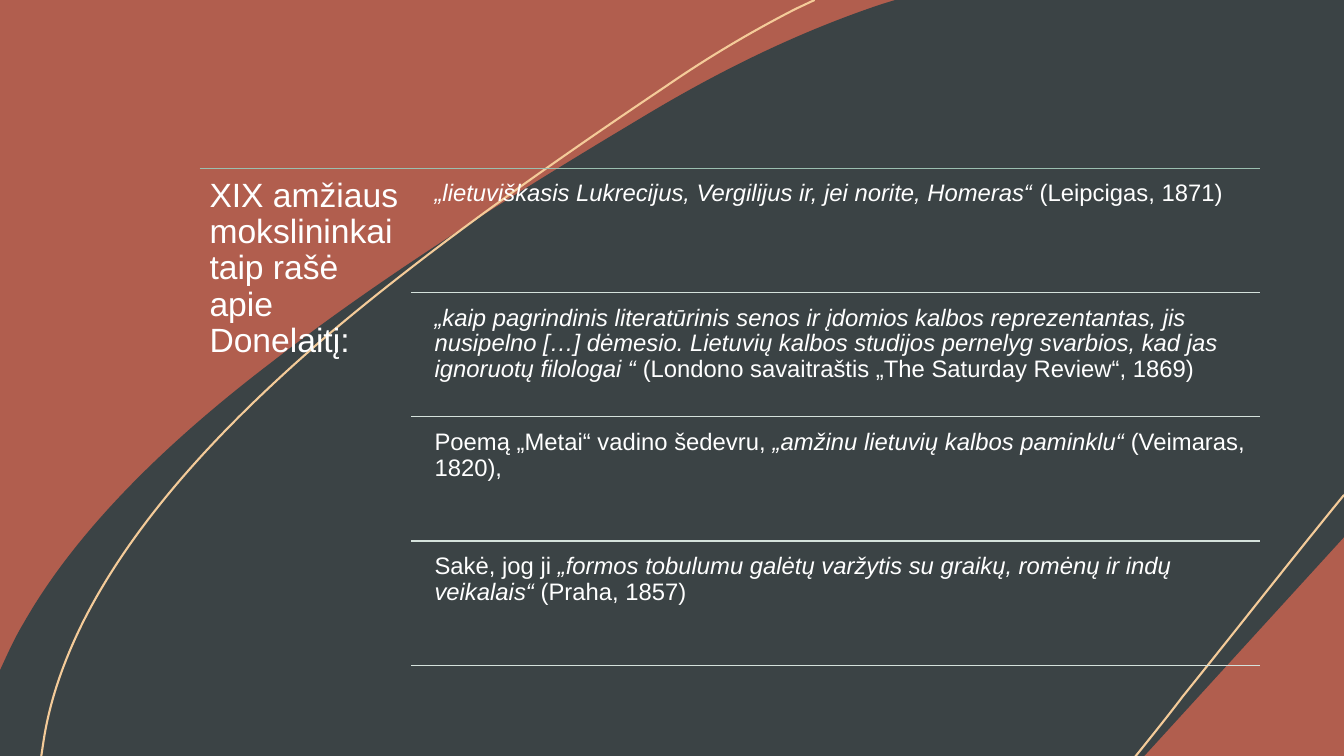
from lxml import etree
from pptx import Presentation
from pptx.dml.color import RGBColor
from pptx.enum.shapes import MSO_CONNECTOR
from pptx.enum.text import MSO_ANCHOR, PP_ALIGN
from pptx.oxml.ns import qn
from pptx.util import Inches, Pt

STRAIGHT = MSO_CONNECTOR.STRAIGHT
TOP, LEFT_ALIGN = MSO_ANCHOR.TOP, PP_ALIGN.LEFT

# Content: each quote is a list of (text, italic) runs
HEADING = [("XIX amžiaus mokslininkai taip rašė apie Donelaitį:", False)]
QUOTES = [
    [("„lietuviškasis Lukrecijus, Vergilijus ir, jei norite, Homeras“ ", True),
     ("(Leipcigas, 1871)", False)],
    [("„kaip pagrindinis literatūrinis senos ir įdomios kalbos reprezentantas, "
      "jis nusipelno […] dėmesio. Lietuvių kalbos studijos pernelyg svarbios, "
      "kad jas ignoruotų filologai “ ", True),
     ("(Londono savaitraštis „The Saturday Review“, 1869)", False)],
    [("Poemą „Metai“ vadino šedevru, ", False),
     ("„amžinu lietuvių kalbos paminklu“", True),
     (" (Veimaras, 1820),", False)],
    [("Sakė, jog ji ", False),
     ("„formos tobulumu galėtų varžytis su graikų, romėnų ir indų veikalais“ ", True),
     ("(Praha, 1857)", False)],
]

COLORS = {"terracotta": "B15E4E", "slate": "3B4345", "sand": "F4CB99",
          "top_rule": "9BBFB0", "rule": "D5E2DC", "text": "FFFFFF"}

# Geometry in inches
WIDTH, HEIGHT = 13.33, 7.5
LEFT, QUOTE_LEFT, RIGHT = 1.98, 4.08, 12.5
TABLE_TOP, TABLE_BOTTOM = 1.67, 6.6
ROW = (TABLE_BOTTOM - TABLE_TOP) / len(QUOTES)
QUOTE_INDENT, QUOTE_DROP, QUOTE_HEIGHT = 0.16, 0.06, 1.18

# Outlines: a start point, then steps of one point (line) or three (Bezier curve)
SLATE_BAND = [
    (8.88, 0), [(WIDTH, 0)], [(WIDTH, 5.33)], [(11.35, HEIGHT)], [(0, HEIGHT)],
    [(0, 6.66)], [(0, 6.65)],
    [(0.07, 6.5), (0.14, 6.34), (0.23, 6.19)],
    [(0.74, 5.29), (1.61, 4.42), (2.7, 3.59)],
    [(3.78, 2.75), (5.07, 1.94), (6.41, 1.14)],
    [(7.26, 0.63), (8.03, 0.28), (8.75, 0.04)],
]
LONG_ARC = [
    (0.41, HEIGHT), [(0.43, 7.37)],
    [(0.49, 6.96), (0.63, 6.56), (0.83, 6.16)],
    [(1.31, 5.21), (2.13, 4.3), (3.14, 3.42)],
    [(4.15, 2.55), (5.35, 1.7), (6.6, 0.86)],
    [(7.05, 0.55), (7.48, 0.3), (7.89, 0.09)], [(8.08, 0)],
]
CORNER_ARC = [
    (WIDTH, 4.91),
    [(12.8, 5.56), (12.27, 6.24), (11.73, 6.91)],
    [(11.58, 7.11), (11.24, 7.53), (11.24, 7.53)],
]


def color(name):
    return RGBColor.from_string(COLORS[name])


def to_emu(point):
    return tuple(Inches(value) for value in point)


def bend(shape, steps):
    """Replace the straight segments of curved steps with Bezier curves."""
    segments = list(shape._element.iter(qn("a:lnTo")))
    for segment, step in zip(segments, steps):
        if len(step) == 1:
            continue
        curve = etree.Element(qn("a:cubicBezTo"))
        for x, y in map(to_emu, step):
            etree.SubElement(curve, qn("a:pt"), x=str(x - shape.left), y=str(y - shape.top))
        segment.getparent().replace(segment, curve)


def add_outline(slide, outline, fill=None, line=None):
    start, *steps = outline
    builder = slide.shapes.build_freeform(*to_emu(start))
    builder.add_line_segments([to_emu(step[-1]) for step in steps], close=fill is not None)
    shape = builder.convert_to_shape()
    bend(shape, steps)
    shape.shadow.inherit = False
    if fill:
        shape.fill.solid()
        shape.fill.fore_color.rgb = color(fill)
        shape.line.fill.background()
    else:
        shape.fill.background()
        shape.line.color.rgb = color(line)
        shape.line.width = Pt(1.5)


def add_rule(slide, left, y, name):
    rule = slide.shapes.add_connector(STRAIGHT, Inches(left), Inches(y), Inches(RIGHT), Inches(y))
    rule.line.color.rgb = color(name)
    rule.line.width = Pt(1)
    etree.SubElement(rule._element.spPr, qn("a:effectLst"))


def add_text(slide, box, runs, size, inset):
    frame = slide.shapes.add_textbox(*map(Inches, box)).text_frame
    frame.word_wrap = True
    frame.vertical_anchor = TOP
    frame.margin_left = frame.margin_right = Inches(inset)
    frame.margin_top = frame.margin_bottom = Inches(inset)
    paragraph = frame.paragraphs[0]
    paragraph.alignment = LEFT_ALIGN
    paragraph.line_spacing = 0.9
    for text, italic in runs:
        run = paragraph.add_run()
        run.text = text
        run.font.name = "Arial"
        run.font.size = Pt(size)
        run.font.italic = italic
        run.font.color.rgb = color("text")


def main():
    presentation = Presentation()
    presentation.slide_width, presentation.slide_height = Inches(WIDTH), Inches(HEIGHT)
    slide = presentation.slides.add_slide(presentation.slide_layouts[6])

    # Background band and arcs
    slide.background.fill.solid()
    slide.background.fill.fore_color.rgb = color("terracotta")
    add_outline(slide, SLATE_BAND, fill="slate")
    add_outline(slide, LONG_ARC, line="sand")
    add_outline(slide, CORNER_ARC, line="sand")

    # Heading column
    add_rule(slide, LEFT, TABLE_TOP, "top_rule")
    add_text(slide, (LEFT, TABLE_TOP, QUOTE_LEFT - LEFT, 5), HEADING, 24, 0.1)

    # Quotes, each closed by a rule
    text_left = QUOTE_LEFT + QUOTE_INDENT
    for row, quote in enumerate(QUOTES):
        top = TABLE_TOP + row * ROW
        add_text(slide, (text_left, top + QUOTE_DROP, RIGHT - text_left, QUOTE_HEIGHT),
                 quote, 17, 0.07)
        add_rule(slide, QUOTE_LEFT, top + ROW, "rule")

    presentation.save("out.pptx")


if __name__ == "__main__":
    main()
